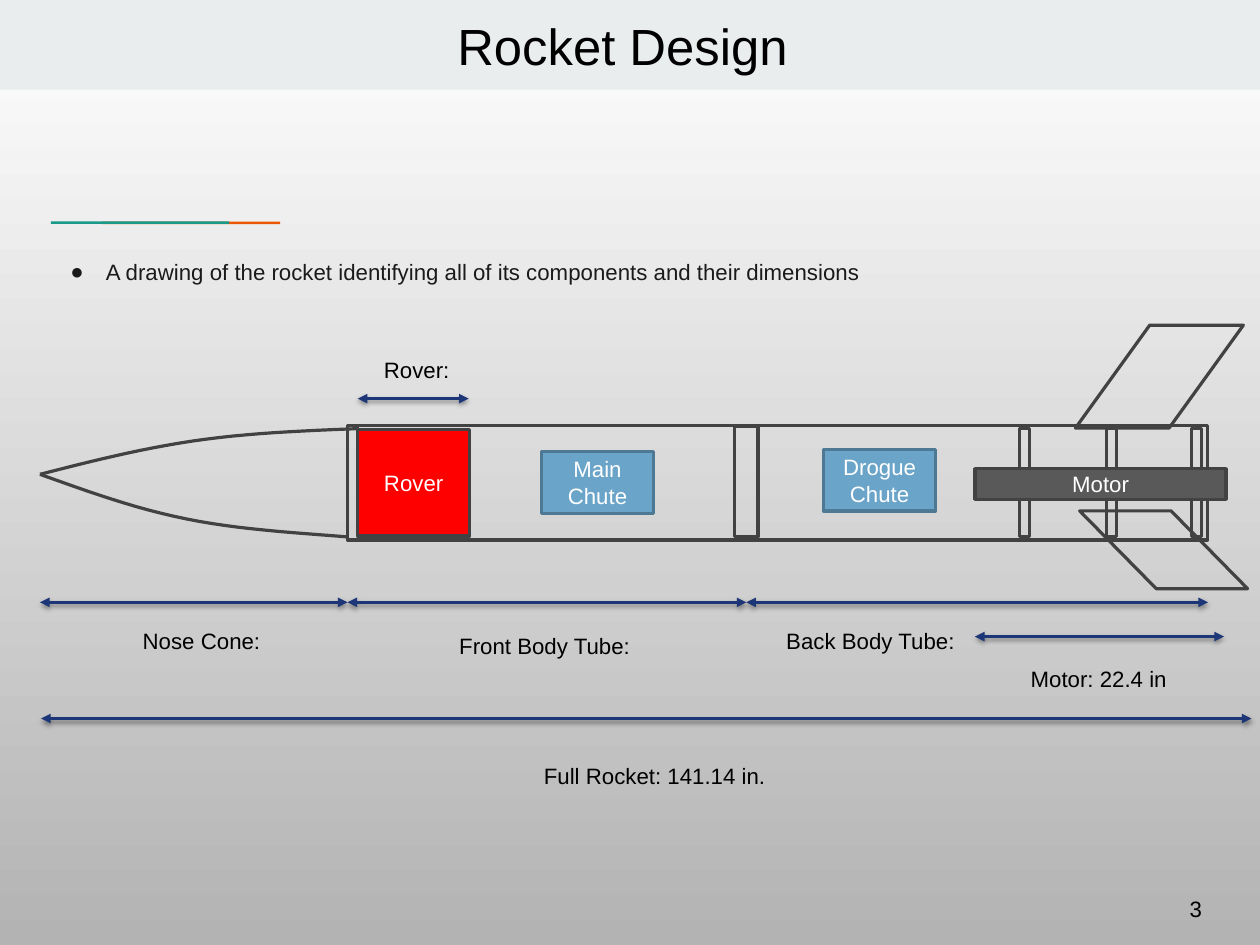
from dataclasses import dataclass

from lxml import etree
from pptx import Presentation
from pptx import util as u
from pptx.dml import color
from pptx.enum import shapes, text
from pptx.oxml import ns

FONT = "Arial"
OUTLINE, CHUTE_FILL, CHUTE_LINE = "424242", "6AA4C8", "4E7994"
ARROW, BLACK, WHITE = "1C3678", "000000", "FFFFFF"
RECTANGLE = shapes.MSO_SHAPE.RECTANGLE
PARALLELOGRAM = shapes.MSO_SHAPE.PARALLELOGRAM
SLIDE_WIDTH, SLIDE_HEIGHT = 793.75, 595.25
TUBE_LEFT, TUBE_RIGHT, NOSE_TIP, COUPLER = 218.9, 761, 25.2, 470.2
MOTOR_LEFT, LABEL_HEIGHT = 614.2, 24.5
CHUTE_SIZE = (70.6, 38.9)
Point = tuple[float, float]


@dataclass
class Part:
    left: float
    top: float
    width: float
    height: float
    fill: str | None = None
    line: str | None = OUTLINE
    lines: tuple[str, ...] = ()
    kind: shapes.MSO_SHAPE = RECTANGLE
    slant: float | None = None
    flipped: bool = False


@dataclass
class Dimension:
    left: float
    right: float
    y: float


@dataclass
class Label:
    words: str
    left: float
    top: float
    width: float
    height: float = LABEL_HEIGHT
    size: float = 14
    ink: str = BLACK
    margins: tuple[float, float, float, float] = (7.2, 3.6, 7.2, 3.6)
    anchor: text.MSO_ANCHOR = text.MSO_ANCHOR.TOP
    align: text.PP_ALIGN = text.PP_ALIGN.LEFT
    spacing: float = 1
    bullet: bool = False


def ring(left: float) -> Part:
    return Part(left, 269.8, 6.5, 68.4)


BACKDROP = [
    Part(0, 0, SLIDE_WIDTH, 56.5, "E9EDEE", None),
    Part(64.2, 139.6, 112.3, 1.6, "EB5600", None),
    Part(32.1, 139.5, 112.3, 1.6, "1A9988", None),
    ring(642.2),
]
TUBE = [
    Part(TUBE_LEFT, 268.2, TUBE_RIGHT - TUBE_LEFT, 72),
    Part(677.5, 204.9, 105.8, 64.8, kind=PARALLELOGRAM, slant=0.722),
]
NOSE = [
    [(226.1, 270), (190.1, 271.4), (154.1, 272.9), (121, 277.9),
     (87.1, 283), (56.2, 290.9), (NOSE_TIP, 298.8)],
    [(TUBE_LEFT, 338.2), (184.3, 335.5), (149, 333.4), (117.4, 326.9),
     (85, 320.4), (55.4, 309.6), (NOSE_TIP, 298.8)],
]
CONTENTS = [
    Part(225.4, 270.7, 70.4, 67, "FF0000", lines=("Rover",)),
    Part(462.8, 268.4, 14.8, 69.8),
    Part(341.1, 284.4, *CHUTE_SIZE, CHUTE_FILL, CHUTE_LINE, ("Main Chute",)),
    Part(518.8, 283, *CHUTE_SIZE, CHUTE_FILL, CHUTE_LINE, ("Drogue", "Chute")),
    ring(697),
    ring(750.4),
    Part(680.2, 321.8, 105.8, 49, kind=PARALLELOGRAM, slant=0.984, flipped=True),
    Part(MOTOR_LEFT, 295.2, 158.2, 19.4, "595959", lines=("Motor",)),
]
DIMENSIONS = [
    Dimension(NOSE_TIP, TUBE_LEFT, 379.4),
    Dimension(COUPLER, TUBE_RIGHT, 379.4),
    Dimension(TUBE_LEFT, COUPLER, 379.4),
    Dimension(225.4, 295.2, 251.1),
    Dimension(MOTOR_LEFT, 771.1, 401),
    Dimension(25.9, 788.4, 452.6),
]
LABELS = [
    Label("Rocket Design ", 39.6, 0, 714.2, 59, 32, margins=(0, 2.2, 0, 0),
          anchor=text.MSO_ANCHOR.MIDDLE, align=text.PP_ALIGN.CENTER, spacing=0.93),
    Label("A drawing of the rocket identifying all of its components and their dimensions",
          32.9, 144.4, 714.2, 442.8, ink="1A1A1A", margins=(0, 1.4, 0, 0),
          spacing=2, bullet=True),
    Label("3", 740.9, 549.4, 47.5, 45.4, margins=(8.6,) * 4,
          anchor=text.MSO_ANCHOR.MIDDLE),
    Label("Nose Cone:", 82.8, 391.4, 96.5),
    Label("Front Body Tube:", 282.2, 394.6, 128.2),
    Label("Back Body Tube:", 488.2, 391.4, 126),
    Label("Motor: 22.4 in", 642.2, 415.8, 110.2),
    Label("Rover:", 234.7, 220.6, 85.7),
    Label("Full Rocket: 141.14 in.", 335.5, 476.6, 205.2),
]


def rgb(value: str) -> color.RGBColor:
    return color.RGBColor.from_string(value)


def add_xml(parent, tag: str, **attributes: str):
    return etree.SubElement(parent, ns.qn(tag), attributes)


def add_run(paragraph, words: str, size: float, ink: str) -> None:
    run = paragraph.add_run()
    run.text = words
    run.font.name = FONT
    run.font.size = u.Pt(size)
    run.font.color.rgb = rgb(ink)


def style(shape, fill: str | None, line: str | None) -> None:
    shape.shadow.inherit = False
    if fill:
        shape.fill.solid()
        shape.fill.fore_color.rgb = rgb(fill)
    else:
        shape.fill.background()
    if line:
        shape.line.color.rgb = rgb(line)
        shape.line.width = u.Pt(2)
    else:
        shape.line.fill.background()


def draw_part(slide, part: Part) -> None:
    box = (u.Pt(v) for v in (part.left, part.top, part.width, part.height))
    shape = slide.shapes.add_shape(part.kind, *box)
    style(shape, part.fill, part.line)
    if part.slant is not None:
        shape.adjustments[0] = part.slant
    if part.flipped:
        shape.element.spPr.xfrm.set("flipH", "1")
    frame = shape.text_frame
    frame.vertical_anchor = text.MSO_ANCHOR.MIDDLE
    for index, words in enumerate(part.lines):
        paragraph = frame.add_paragraph() if index else frame.paragraphs[0]
        paragraph.alignment = text.PP_ALIGN.CENTER
        add_run(paragraph, words, 14, WHITE)


def draw_curve(slide, points: list[Point], steps: int = 12) -> None:
    """Draw a chain of cubic Bézier curves as one open outline."""
    outline = []
    for first in range(0, len(points) - 1, 3):
        controls = points[first:first + 4]
        for step in range(1, steps + 1):
            t = step / steps
            weights = ((1 - t) ** 3, 3 * t * (1 - t) ** 2, 3 * t * t * (1 - t), t ** 3)
            outline.append(tuple(
                u.Pt(sum(w * p[axis] for w, p in zip(weights, controls)))
                for axis in (0, 1)))
    builder = slide.shapes.build_freeform(*(u.Pt(v) for v in points[0]))
    builder.add_line_segments(outline, close=False)
    style(builder.convert_to_shape(), None, OUTLINE)


def draw_dimension(slide, dimension: Dimension) -> None:
    y = u.Pt(dimension.y)
    connector = slide.shapes.add_connector(
        shapes.MSO_CONNECTOR.STRAIGHT, u.Pt(dimension.right), y, u.Pt(dimension.left), y)
    connector.line.color.rgb = rgb(ARROW)
    connector.line.width = u.Pt(2)
    properties = connector.element.spPr
    line = properties.find(ns.qn("a:ln"))
    for end in ("a:headEnd", "a:tailEnd"):
        add_xml(line, end, type="triangle")
    effects = add_xml(properties, "a:effectLst")
    shadow = add_xml(effects, "a:outerShdw", blurRad=str(u.Pt(3.1)), dist=str(u.Pt(1.6)),
                     dir="5400000", rotWithShape="0")
    shade = add_xml(shadow, "a:srgbClr", val=BLACK)
    add_xml(shade, "a:alpha", val="38000")


def draw_label(slide, label: Label) -> None:
    box = (u.Pt(v) for v in (label.left, label.top, label.width, label.height))
    frame = slide.shapes.add_textbox(*box).text_frame
    frame.word_wrap = True
    frame.vertical_anchor = label.anchor
    (frame.margin_left, frame.margin_top,
     frame.margin_right, frame.margin_bottom) = (u.Pt(v) for v in label.margins)
    paragraph = frame.paragraphs[0]
    paragraph.alignment = label.align
    paragraph.line_spacing = label.spacing
    if label.bullet:
        properties = paragraph._p.get_or_add_pPr()
        properties.set("marL", str(u.Pt(33.8)))
        properties.set("indent", str(u.Pt(-22.3)))
        add_xml(add_xml(properties, "a:buClr"), "a:srgbClr", val=label.ink)
        add_xml(properties, "a:buFont", typeface=FONT)
        add_xml(properties, "a:buChar", char="●")
    add_run(paragraph, label.words, label.size, label.ink)


def main() -> None:
    presentation = Presentation()
    presentation.slide_width = u.Pt(SLIDE_WIDTH)
    presentation.slide_height = u.Pt(SLIDE_HEIGHT)
    slide = presentation.slides.add_slide(presentation.slide_layouts[6])
    background = slide.background.fill
    background.gradient()
    background.gradient_angle = 270
    for stop, shade in zip(background.gradient_stops, (WHITE, "B3B3B3")):
        stop.color.rgb = rgb(shade)
    for part in BACKDROP + TUBE:
        draw_part(slide, part)
    for points in NOSE:
        draw_curve(slide, points)
    for part in CONTENTS:
        draw_part(slide, part)
    for dimension in DIMENSIONS:
        draw_dimension(slide, dimension)
    for label in LABELS:
        draw_label(slide, label)
    presentation.save("out.pptx")


if __name__ == "__main__":
    main()
